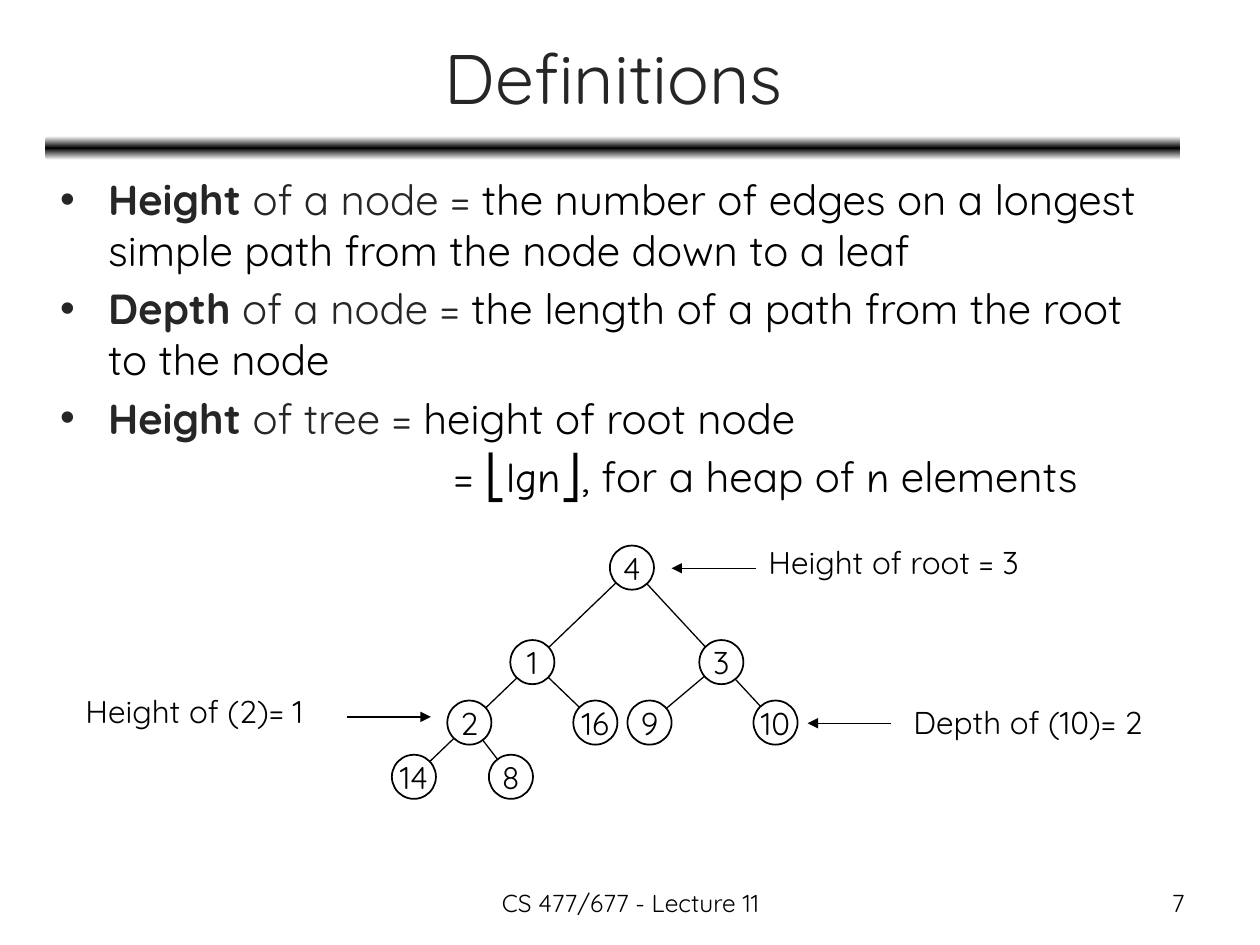
from collections import namedtuple
from dataclasses import dataclass

from lxml import etree
from pptx import Presentation, util as u
from pptx.dml.color import RGBColor
from pptx.enum import shapes, text
from pptx.oxml import ns

PX = 9144
Box = namedtuple("Box", "left top width height")


@dataclass(frozen=True)
class Theme:
    """Colours, fonts and type sizes of the slide."""
    ink: RGBColor = RGBColor(0, 0, 0)
    soft: RGBColor = RGBColor(0x26, 0x26, 0x26)
    paper: RGBColor = RGBColor(255, 255, 255)
    font: str = "Quicksand"
    math_font: str = "Comic Neue"
    title: int = 40
    body: int = 24
    label: int = 18
    footer: int = 14
    edge: float = 0.75
    outline: float = 1


THEME = Theme()


def emu(box):
    """Turn a box in px into EMU lengths."""
    return [round(length * PX) for length in box]


def style_run(run, size, color=THEME.ink, bold=False, font=THEME.font):
    """Set the type of one run."""
    run.font.size = u.Pt(size)
    run.font.name = font
    run.font.bold = bold
    run.font.color.rgb = color


def add_text(slide, box, wording, size, align=text.PP_ALIGN.LEFT,
             color=THEME.ink, anchor=text.MSO_ANCHOR.TOP, wrap=True):
    """Place a one-paragraph text box."""
    frame = slide.shapes.add_textbox(*emu(box)).text_frame
    frame.word_wrap = wrap
    frame.vertical_anchor = anchor
    line = frame.paragraphs[0]
    line.text = wording
    line.alignment = align
    style_run(line.runs[0], size, color)


def add_line(slide, start, end, arrow=False):
    """Draw a thin straight line, with an arrowhead at its end if wanted."""
    line = slide.shapes.add_connector(shapes.MSO_CONNECTOR.STRAIGHT, *emu(start + end))
    line.line.color.rgb = THEME.ink
    line.line.width = u.Pt(THEME.edge)
    if arrow:
        etree.SubElement(line.line._get_or_add_ln(), ns.qn("a:tailEnd"), type="triangle")
    etree.SubElement(line._element.spPr, ns.qn("a:effectLst"))


def add_header(slide, box):
    """Place the title and the shaded rule below it."""
    rule = slide.shapes.add_shape(
        shapes.MSO_SHAPE.ROUNDED_RECTANGLE,
        *emu((box.left - 1, box.top + 97, box.width + 1, 19)))
    rule.shadow.inherit = False
    rule.line.fill.background()
    rule.fill.gradient()
    rule.fill.gradient_angle = 90
    stops = rule.fill._fill._gradFill.gsLst
    stops.clear()
    for position, color in ((0, THEME.paper), (50000, THEME.ink), (100000, THEME.paper)):
        stop = etree.SubElement(stops, ns.qn("a:gs"), pos=str(position))
        etree.SubElement(stop, ns.qn("a:srgbClr"), val=str(color))
    add_text(slide, box, "Definitions", THEME.title, text.PP_ALIGN.CENTER,
             THEME.soft, text.MSO_ANCHOR.MIDDLE)


def add_definitions(slide, box, definitions, formula):
    """Write the bulleted definitions and the indented formula."""
    frame = slide.shapes.add_textbox(*emu(box)).text_frame
    frame.word_wrap = True
    lines = [frame.paragraphs[0]] + [frame.add_paragraph() for _ in definitions]
    for line in lines:
        line.space_before = u.Pt(THEME.body * 0.2)
    for line, (term, subject, meaning) in zip(lines, definitions):
        props = line._p.get_or_add_pPr()
        props.set("marL", str(38 * PX))
        props.set("indent", str(-38 * PX))
        etree.SubElement(props, ns.qn("a:buFont"), typeface="Arial")
        etree.SubElement(props, ns.qn("a:buChar"), char="•")
        for wording, color, bold in ((term, THEME.soft, True),
                                     (subject, THEME.soft, False),
                                     (meaning, THEME.ink, False)):
            run = line.add_run()
            run.text = wording
            style_run(run, THEME.body, color, bold)
    lines[-1]._p.get_or_add_pPr().set("marL", str(312 * PX))
    for wording, font in formula:
        run = lines[-1].add_run()
        run.text = wording
        style_run(run, THEME.body, font=font)


def add_tree(slide, box, nodes, branches, size=35):
    """Draw the straight branches of the tree and its nodes on top."""
    places = {key: (box.left + x, box.top + y) for key, (x, y) in nodes.items()}
    centres = {key: (x + size / 2, y + size / 2) for key, (x, y) in places.items()}
    for upper, lower in branches:
        add_line(slide, centres[upper], centres[lower])
    for key, place in places.items():
        node = slide.shapes.add_shape(shapes.MSO_SHAPE.OVAL, *emu(place + (size, size)))
        node.shadow.inherit = False
        node.fill.solid()
        node.fill.fore_color.rgb = THEME.paper
        node.line.color.rgb = THEME.ink
        node.line.width = u.Pt(THEME.outline)
        frame = node.text_frame
        frame.word_wrap = False
        frame.vertical_anchor = text.MSO_ANCHOR.MIDDLE
        frame.text = str(key)
        frame.paragraphs[0].alignment = text.PP_ALIGN.CENTER
        style_run(frame.paragraphs[0].runs[0], THEME.label)


def add_callout(slide, box, wording, start, end, drop):
    """Place a label and its arrow, measured from the label's corner."""
    add_text(slide, box, wording, THEME.label, wrap=False)
    add_line(slide, (box.left + start, box.top + drop),
             (box.left + end, box.top + drop), arrow=True)


def add_footer(slide, box, course, number):
    """Place the course name and the page number."""
    add_text(slide, Box(box.left, box.top, 317, box.height), course,
             THEME.footer, text.PP_ALIGN.CENTER)
    add_text(slide, Box(box.left + 375, box.top, 233, box.height), number,
             THEME.footer, text.PP_ALIGN.RIGHT)


def main():
    """Build the slide and save it."""
    deck = Presentation()
    deck.slide_width, deck.slide_height = emu((1000, 750))
    slide = deck.slides.add_slide(deck.slide_layouts[6])
    add_header(slide, Box(37, 11, 900, 99))
    add_definitions(
        slide, Box(38, 133, 900, 555),
        [("Height ", "of a node = ",
          "the number of edges on a longest simple path from the node down to a leaf"),
         ("Depth", " of a node = ", "the length of a path from the root to the node"),
         ("Height ", "of tree = ", "height of root node")],
        [("= ", THEME.font), ("⎣lgn⎦", THEME.math_font), (", for a heap of ", THEME.font),
         ("n", THEME.math_font), (" elements", THEME.font)])
    add_tree(
        slide, Box(311, 433, 322, 201),
        {4: (173, 0), 1: (94, 75), 3: (244, 75), 2: (44, 123), 16: (144, 123),
         9: (187, 123), 10: (287, 123), 14: (0, 166), 8: (77, 166)},
        [(4, 14), (4, 10), (1, 16), (3, 9), (2, 8)])
    add_callout(slide, Box(600, 426, 231, 40), "Height of root = 3", 0, -67, 25)
    add_callout(slide, Box(58, 544, 207, 40), "Height of (2)= 1", 217, 284, 25)
    add_callout(slide, Box(715, 553, 218, 40), "Depth of (10)= 2", -8, -74, 21)
    add_footer(slide, Box(342, 700, 608, 35), "CS 477/677 - Lecture 11", "7")
    deck.save("out.pptx")


if __name__ == "__main__":
    main()
